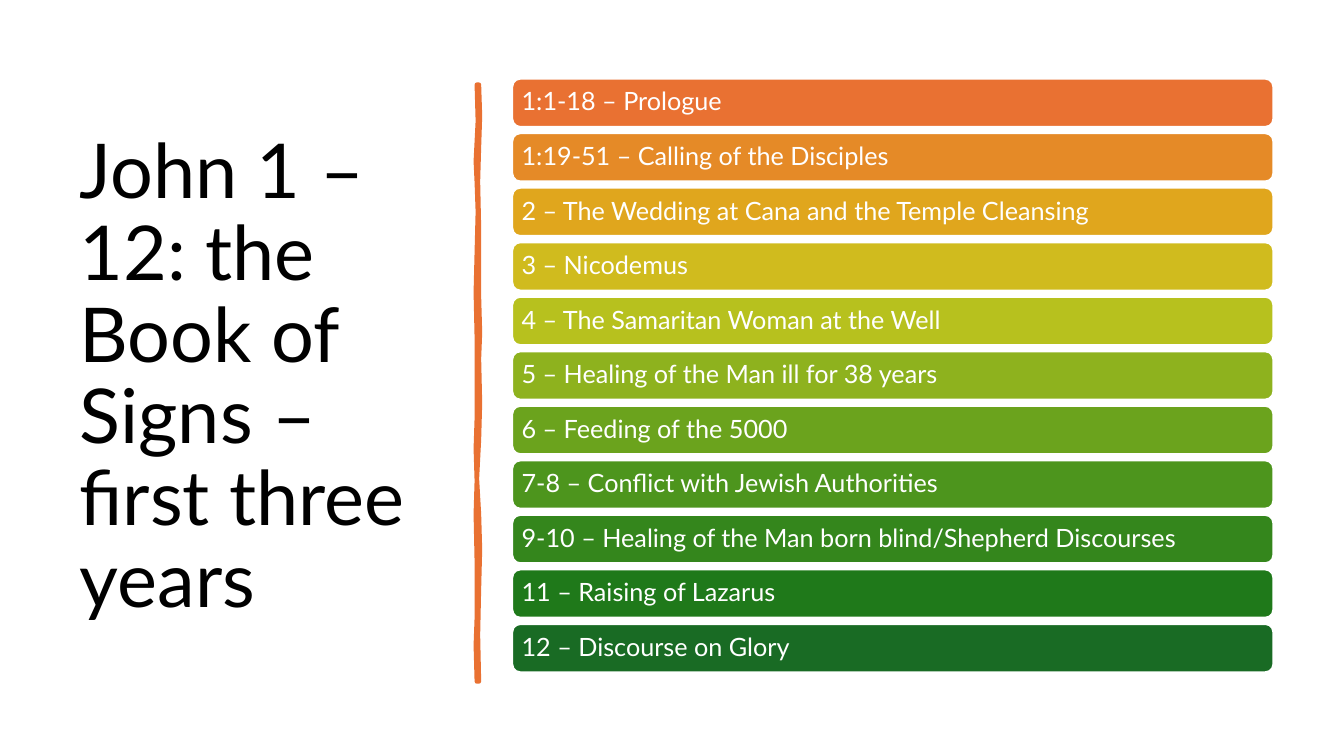
from dataclasses import dataclass

from pptx import Presentation
from pptx.dml.color import RGBColor
from pptx.enum import shapes, text
from pptx.util import Inches, Pt

TITLE = "John 1 – 12: the Book of Signs – first three years"
CHAPTERS = [
    ("1:1-18 – Prologue", "E97132"),
    ("1:19-51 – Calling of the Disciples", "E58A27"),
    ("2 – The Wedding at Cana and the Temple Cleansing", "E0A61D"),
    ("3 – Nicodemus", "D0BB1E"),
    ("4 – The Samaritan Woman at the Well", "B7C11E"),
    ("5 – Healing of the Man ill for 38 years", "8EB21E"),
    ("6 – Feeding of the 5000", "6BA31D"),
    ("7-8 – Conflict with Jewish Authorities", "4D951D"),
    ("9-10 – Healing of the Man born blind/Shepherd Discourses", "34861C"),
    ("11 – Raising of Lazarus", "1F791A"),
    ("12 – Discourse on Glory", "196B24"),
]
RULE_OUTLINE = [
    (4.75, 0.84), (4.76, 1.15), (4.75, 1.46), (4.74, 1.8), (4.75, 2.26),
    (4.75, 2.94), (4.76, 3.3), (4.75, 3.56), (4.76, 4.0), (4.75, 4.36),
    (4.73, 4.75), (4.75, 5.1), (4.76, 5.45), (4.75, 5.84), (4.74, 6.3),
    (4.75, 6.76), (4.73, 6.76), (4.72, 6.4), (4.73, 6.13), (4.73, 5.57),
    (4.72, 5.1), (4.73, 4.77), (4.72, 4.45), (4.73, 4.15), (4.73, 3.35),
    (4.72, 2.9), (4.73, 2.5), (4.74, 2.1), (4.73, 1.81), (4.72, 1.6),
    (4.74, 1.2), (4.73, 0.84),
]


@dataclass(frozen=True)
class Theme:
    font: str = "Lato"
    title_size: float = 54
    bar_size: float = 18
    rule_width: float = 3.25
    bar_border: float = 1.5
    ink: str = "000000"
    paper: str = "FFFFFF"
    accent: str = "E97132"


THEME = Theme()
BAR_LEFT, BAR_WIDTH, BAR_HEIGHT = 5.08, 7.55, 0.48
FIRST_TOP, LAST_TOP = 0.78, 6.19


def paint(shape, fill, line, width):
    shape.shadow.inherit = False
    shape.fill.solid()
    shape.fill.fore_color.rgb = RGBColor.from_string(fill)
    shape.line.color.rgb = RGBColor.from_string(line)
    shape.line.width = Pt(width)


def write(shape, words, size, color):
    frame = shape.text_frame
    frame.text = words
    frame.word_wrap = True
    frame.auto_size = text.MSO_AUTO_SIZE.NONE
    frame.vertical_anchor = text.MSO_ANCHOR.MIDDLE
    para = frame.paragraphs[0]
    para.alignment = text.PP_ALIGN.LEFT
    para.line_spacing = 0.9
    font = para.runs[0].font
    font.name = THEME.font
    font.size = Pt(size)
    font.color.rgb = RGBColor.from_string(color)


def add_title(page):
    title = page.shapes.title
    title.left, title.top = Inches(0.69), Inches(0.7)
    title.width, title.height = Inches(3.74), Inches(6.11)
    write(title, TITLE, THEME.title_size, THEME.ink)


def add_rule(page):
    points = [(Inches(x), Inches(y)) for x, y in RULE_OUTLINE]
    builder = page.shapes.build_freeform(*points[0])
    builder.add_line_segments(points[1:], close=True)
    paint(builder.convert_to_shape(), THEME.accent, THEME.accent, THEME.rule_width)


def add_bars(page):
    pitch = (LAST_TOP - FIRST_TOP) / (len(CHAPTERS) - 1)
    for index, (words, color) in enumerate(CHAPTERS):
        bar = page.shapes.add_shape(
            shapes.MSO_SHAPE.ROUNDED_RECTANGLE,
            Inches(BAR_LEFT), Inches(FIRST_TOP + index * pitch),
            Inches(BAR_WIDTH), Inches(BAR_HEIGHT),
        )
        paint(bar, color, THEME.paper, THEME.bar_border)
        write(bar, words, THEME.bar_size, THEME.paper)
        frame = bar.text_frame
        frame.margin_left = frame.margin_right = Inches(0.07)
        frame.margin_top = frame.margin_bottom = Inches(0.07)


def main():
    deck = Presentation()
    deck.slide_width, deck.slide_height = Inches(13.33), Inches(7.5)
    page = deck.slides.add_slide(deck.slide_layouts[5])
    add_title(page)
    add_rule(page)
    add_bars(page)
    deck.save("out.pptx")


if __name__ == "__main__":
    main()
